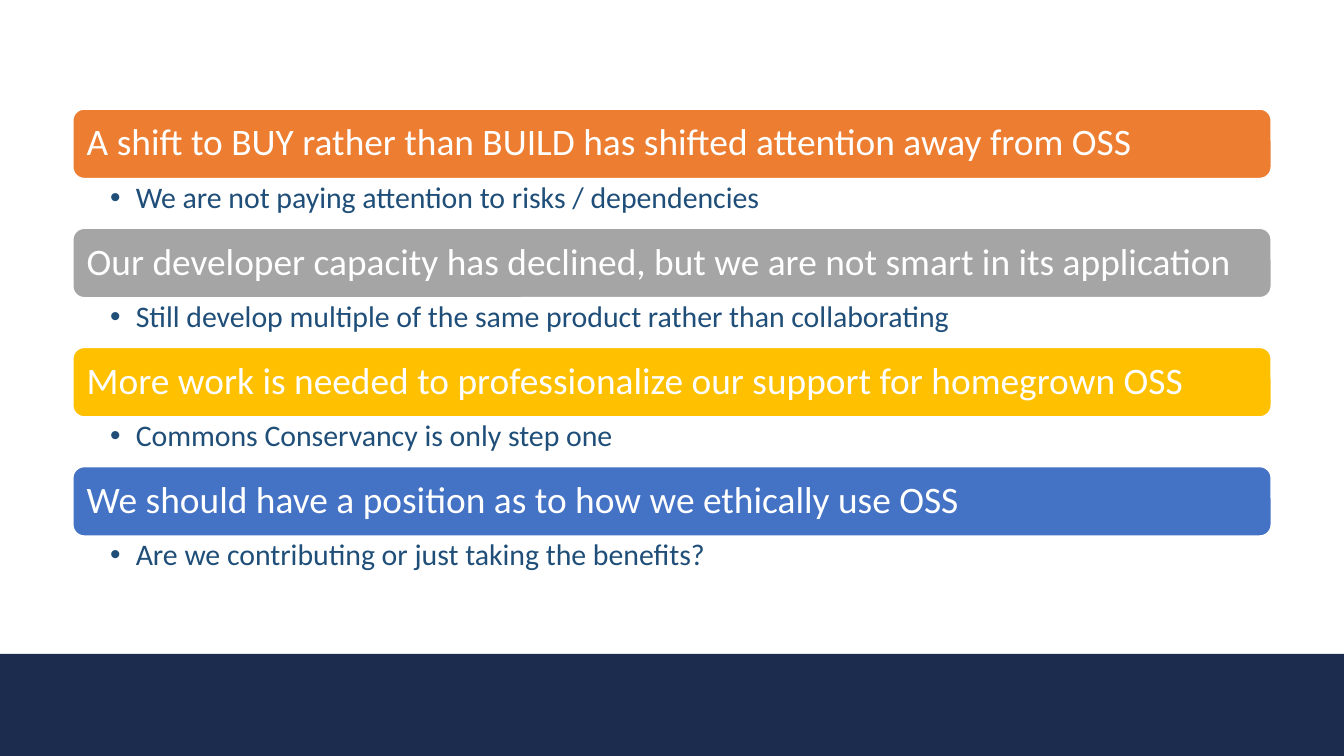
from pptx import Presentation, util as u
from pptx.dml.color import RGBColor
from pptx.enum import shapes, text
from pptx.oxml.ns import qn
from lxml import etree

WIDE = 10
HIGH = WIDE * 9 / 16
LEFT, TOP, LAST = 0.54, 0.81, 3.47
SPAN = WIDE - 2 * LEFT
BAR, NOTE, FOOT = 0.52, 0.36, 0.76
FONT = "Calibri"
ITEMS = [
    ("ED7D31", "A shift to BUY rather than BUILD has shifted attention away from OSS",
     "We are not paying attention to risks / dependencies"),
    ("A5A5A5", "Our developer capacity has declined, but we are not smart in its application",
     "Still develop multiple of the same product rather than collaborating"),
    ("FFC000", "More work is needed to professionalize our support for homegrown OSS",
     "Commons Conservancy is only step one"),
    ("4472C4", "We should have a position as to how we ethically use OSS",
     "Are we contributing or just taking the benefits?"),
]
STEP = (LAST - TOP) / (len(ITEMS) - 1)


def tint(code):
    """Turn a hex string into a colour."""
    return RGBColor.from_string(code)


def block(slide, kind, box, fill, line=None):
    """Add a filled preset shape, outlined if a line colour is given."""
    shape = slide.shapes.add_shape(kind, *map(u.Inches, box))
    shape.shadow.inherit = False
    shape.fill.solid()
    shape.fill.fore_color.rgb = tint(fill)
    if line:
        shape.line.color.rgb = tint(line)
        shape.line.width = u.Pt(1)
    else:
        shape.line.fill.background()
    return shape


def write(shape, words, size, color, pads, anchor):
    """Put one left-aligned paragraph in a shape and return it."""
    frame = shape.text_frame
    frame.word_wrap = True
    frame.vertical_anchor = anchor
    (frame.margin_left, frame.margin_top,
     frame.margin_right, frame.margin_bottom) = map(u.Inches, pads)
    para = frame.paragraphs[0]
    para.alignment = text.PP_ALIGN.LEFT
    para.line_spacing = 0.9
    run = para.add_run()
    run.text = words
    run.font.name = FONT
    run.font.size = u.Pt(size)
    run.font.color.rgb = tint(color)
    return para


def bullet(para):
    """Give a paragraph a round bullet with a hanging indent."""
    props = para._p.get_or_add_pPr()
    props.set("marL", str(u.Inches(0.19)))
    props.set("indent", str(u.Inches(-0.19)))
    etree.SubElement(props, qn("a:buFont")).set("typeface", "Arial")
    etree.SubElement(props, qn("a:buChar")).set("char", "•")


def header(slide, top, words, fill):
    """Add a rounded bar with its statement."""
    bar = block(slide, shapes.MSO_SHAPE.ROUNDED_RECTANGLE,
                (LEFT, top, SPAN, BAR), fill, "FFFFFF")
    write(bar, words, 20, "FFFFFF", [0.08] * 4, text.MSO_ANCHOR.MIDDLE)


def detail(slide, top, words):
    """Add the bulleted line below a bar."""
    box = slide.shapes.add_textbox(*map(u.Inches, (LEFT, top, SPAN, NOTE)))
    para = write(box, words, 16, "1F4E79", (0.28, 0.03, 0.16, 0.03),
                 text.MSO_ANCHOR.TOP)
    para.level = 1
    bullet(para)


def main():
    """Build the slide and save it."""
    deck = Presentation()
    deck.slide_width, deck.slide_height = u.Inches(WIDE), u.Inches(HIGH)
    slide = deck.slides.add_slide(deck.slide_layouts[6])
    block(slide, shapes.MSO_SHAPE.RECTANGLE,
          (0, HIGH - FOOT, WIDE, FOOT), "1C2C4F")
    for row, (fill, claim, note) in enumerate(ITEMS):
        top = TOP + row * STEP
        header(slide, top, claim, fill)
        detail(slide, top + BAR, note)
    deck.save("out.pptx")


if __name__ == "__main__":
    main()
